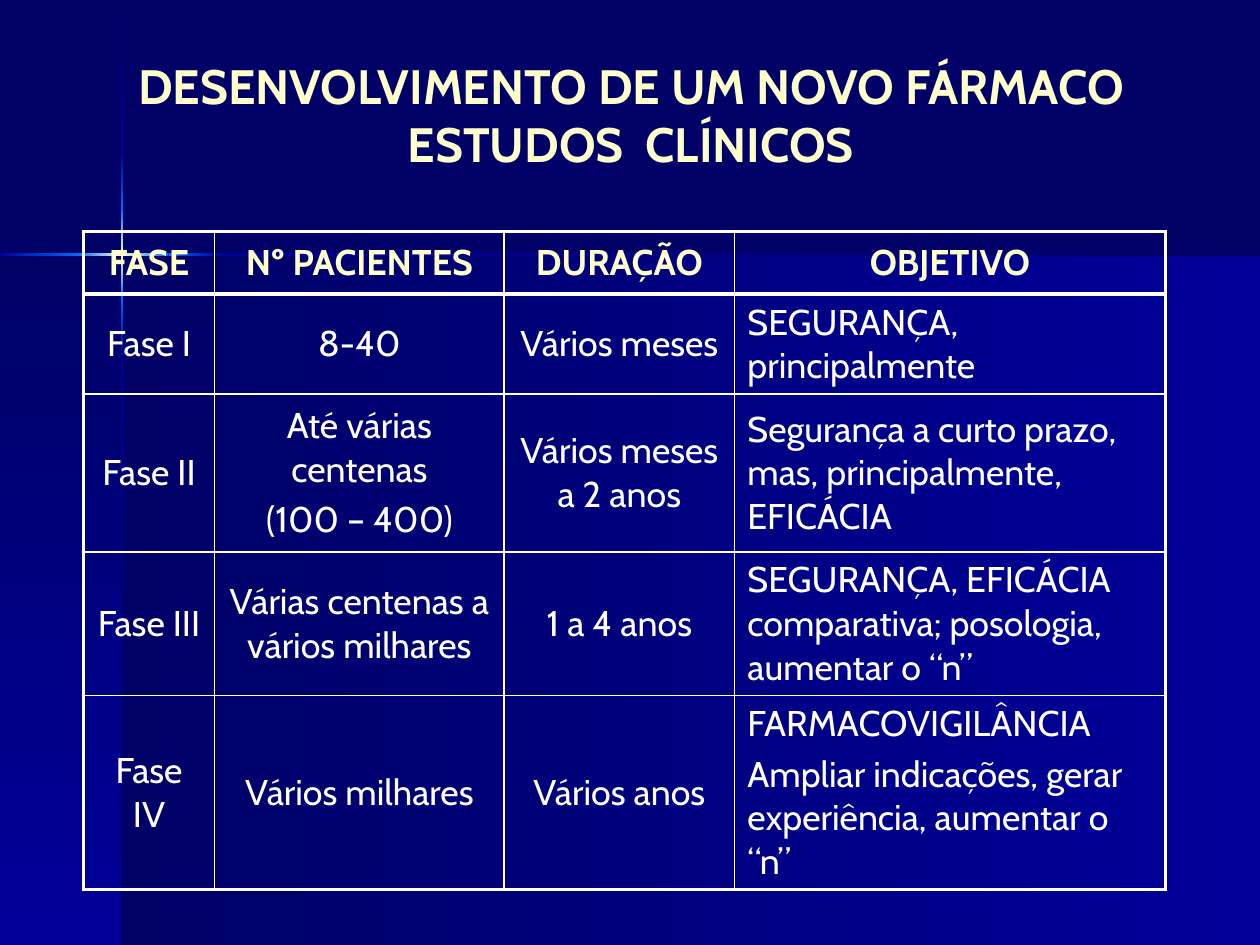
from itertools import pairwise

from lxml import etree
from pptx import Presentation
from pptx.dml.color import RGBColor
from pptx.enum.shapes import MSO_SHAPE
from pptx.enum.text import MSO_ANCHOR, MSO_AUTO_SIZE, PP_ALIGN
from pptx.oxml.ns import qn
from pptx.util import Cm, Pt

RECTANGLE = MSO_SHAPE.RECTANGLE
MIDDLE, BOTTOM = MSO_ANCHOR.MIDDLE, MSO_ANCHOR.BOTTOM
CENTER, LEFT = PP_ALIGN.CENTER, PP_ALIGN.LEFT
NO_AUTOFIT = MSO_AUTO_SIZE.NONE

TITLE_LINES = ["DESENVOLVIMENTO DE UM NOVO FÁRMACO", "ESTUDOS  CLÍNICOS"]
# Each cell is a list of paragraphs
ROWS = [
    [["FASE"], ["Nº PACIENTES"], ["DURAÇÃO"], ["OBJETIVO"]],
    [["Fase I"], ["8-40"], ["Vários meses"], ["SEGURANÇA, principalmente"]],
    [["Fase II"], ["Até várias centenas", "(100 – 400)"], ["Vários meses a 2 anos"],
     ["Segurança a curto prazo, mas, principalmente, EFICÁCIA"]],
    [["Fase III"], ["Várias centenas a vários milhares"], ["1 a 4 anos"],
     ["SEGURANÇA, EFICÁCIA comparativa; posologia, aumentar o “n”"]],
    [["Fase IV"], ["Vários milhares"], ["Vários anos"],
     ["FARMACOVIGILÂNCIA", "Ampliar indicações, gerar experiência, aumentar o “n”"]],
]

THEME = {
    "font": "Cabin", "title_size": Pt(27), "cell_size": Pt(20), "para_gap": Pt(4),
    "navy": "000066", "blue": "000099", "bright": "0066FF",
    "cream": "FFFFCC", "white": "FFFFFF",
    "outer_line": Pt(2.25), "inner_line": Pt(1),
}

# Lengths in centimetres
PAGE_WIDTH, PAGE_HEIGHT = 24.89, 18.67
CROSS_X, CROSS_Y = 2.41, 5.03
RAY_WIDTH = 0.05
TITLE_BOX = (0.84, 1.04, 23.24, 2.49)
TABLE_LEFT, TABLE_TOP = 1.65, 4.57
COLUMN_WIDTHS = [2.59, 5.72, 4.55, 8.51]
ROW_HEIGHTS = [1.24, 1.91, 3.12, 2.77, 3.73]

# Places along each ray and the colour reached there
VERTICAL_RAY = [(0, "navy"), (3.02, "blue"), (4.11, "bright"), (CROSS_Y, "cream"),
                (5.92, "bright"), (7.01, "blue"), (PAGE_HEIGHT, "navy")]
HORIZONTAL_RAY = [(0, "blue"), (1.52, "bright"), (CROSS_X, "cream"),
                  (3.33, "bright"), (4.39, "blue"), (PAGE_WIDTH, "navy")]


def color(name):
    return RGBColor.from_string(THEME[name])


def apply_format(target, values):
    for name, value in values.items():
        setattr(target, name, value)


def format_font(font, size, color_name, bold):
    apply_format(font, {"name": THEME["font"], "size": THEME[size], "bold": bold})
    font.color.rgb = color(color_name)


def add_gradient_box(page, box, color_names, downward):
    shape = page.shapes.add_shape(RECTANGLE, *map(Cm, box))
    shape.shadow.inherit = False
    shape.line.fill.background()
    shape.fill.gradient()
    shape.fill.gradient_angle = 270 if downward else 0
    for stop, name in zip(shape.fill.gradient_stops, color_names):
        stop.color.rgb = color(name)


def add_backdrop(page):
    page.background.fill.solid()
    page.background.fill.fore_color.rgb = color("navy")
    lower = PAGE_HEIGHT - CROSS_Y
    panel = ("navy", "blue")
    add_gradient_box(page, (CROSS_X, CROSS_Y, PAGE_WIDTH - CROSS_X, lower), panel, False)
    add_gradient_box(page, (0, CROSS_Y, CROSS_X, lower), panel, True)
    for ray, downward in ((VERTICAL_RAY, True), (HORIZONTAL_RAY, False)):
        for (start, first), (end, last) in pairwise(ray):
            if downward:
                box = (CROSS_X - RAY_WIDTH / 2, start, RAY_WIDTH, end - start)
            else:
                box = (start, CROSS_Y - RAY_WIDTH / 2, end - start, RAY_WIDTH)
            add_gradient_box(page, box, (first, last), downward)


def fill_title(title):
    left, top, width, height = map(Cm, TITLE_BOX)
    apply_format(title, {"left": left, "top": top, "width": width, "height": height})
    apply_format(title.text_frame, {"vertical_anchor": BOTTOM, "word_wrap": True,
                                    "auto_size": NO_AUTOFIT})
    para = title.text_frame.paragraphs[0]
    para.alignment = CENTER
    for index, line in enumerate(TITLE_LINES):
        if index:
            para.add_line_break()
        span = para.add_run()
        span.text = line
        format_font(span.font, "title_size", "cream", True)


def set_borders(cell, widths):
    """Draw the left, right, top and bottom borders, placed before the cell's fill."""
    properties = cell._tc.get_or_add_tcPr()
    for index, (tag, width) in enumerate(zip(("a:lnL", "a:lnR", "a:lnT", "a:lnB"), widths)):
        line = etree.Element(qn(tag), w=str(int(width)))
        solid = etree.SubElement(line, qn("a:solidFill"))
        etree.SubElement(solid, qn("a:srgbClr"), val=THEME["white"])
        properties.insert(index, line)


def fill_cell(cell, texts, is_header, alignment):
    cell.fill.background()
    cell.vertical_anchor = MIDDLE
    for index, text in enumerate(texts):
        if index:
            para = cell.text_frame.add_paragraph()
            para.space_before = THEME["para_gap"]
        else:
            para = cell.text_frame.paragraphs[0]
        para.alignment = alignment
        span = para.add_run()
        span.text = text
        format_font(span.font, "cell_size", "cream" if is_header else "white", is_header)


def add_phase_table(page):
    last_row, last_column = len(ROWS) - 1, len(COLUMN_WIDTHS) - 1
    table = page.shapes.add_table(
        len(ROWS), len(COLUMN_WIDTHS), Cm(TABLE_LEFT), Cm(TABLE_TOP),
        Cm(sum(COLUMN_WIDTHS)), Cm(sum(ROW_HEIGHTS))).table
    apply_format(table, {"first_row": False, "horz_banding": False})
    for column, width in zip(table.columns, COLUMN_WIDTHS):
        column.width = Cm(width)
    for row, height in zip(table.rows, ROW_HEIGHTS):
        row.height = Cm(height)
    for r, texts_by_column in enumerate(ROWS):
        for c, texts in enumerate(texts_by_column):
            cell = table.cell(r, c)
            is_header = r == 0
            alignment = LEFT if c == last_column and not is_header else CENTER
            fill_cell(cell, texts, is_header, alignment)
            heavy = (c == 0, c == last_column, r <= 1, r in (0, last_row))
            set_borders(cell, [THEME["outer_line" if edge else "inner_line"]
                               for edge in heavy])


def main():
    deck = Presentation()
    deck.slide_width, deck.slide_height = Cm(PAGE_WIDTH), Cm(PAGE_HEIGHT)
    page = deck.slides.add_slide(deck.slide_layouts.get_by_name("Title Only"))
    add_backdrop(page)
    fill_title(page.shapes.title)
    add_phase_table(page)
    deck.save("out.pptx")


if __name__ == "__main__":
    main()
